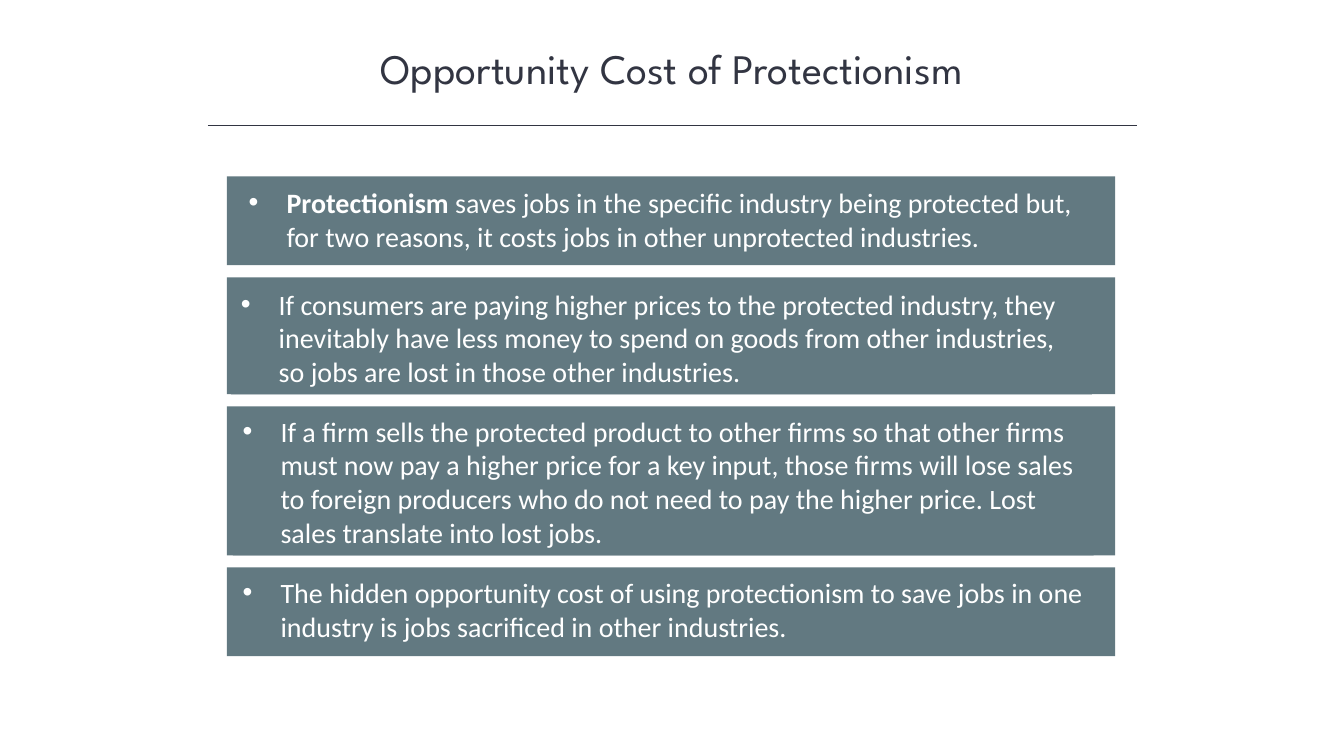
from dataclasses import dataclass

from lxml.etree import SubElement
from pptx import Presentation
from pptx.dml.color import RGBColor
from pptx.enum.shapes import MSO_CONNECTOR as Link, MSO_SHAPE as Shape
from pptx.enum.text import MSO_ANCHOR as Anchor, MSO_AUTO_SIZE as Fit, PP_ALIGN as Align
from pptx.oxml.ns import qn
from pptx.util import Pt

INK, SLATE, WHITE = "323542", "627981", "FFFFFF"
LEFT, TOP, WIDE, GAP = 162, 126, 634.5, 8.6
TEXT_WIDE, LINE, PAD = 615, 24.4, 6.8
INDENT = 27


@dataclass
class Card:
    high: float
    lines: int
    dx: float
    dy: float
    text: str
    lead: str = ""


CARDS = [
    Card(63.5, 2, 8.6, 3,
         " saves jobs in the specific industry being protected but, for two reasons, "
         "it costs jobs in other unprotected industries.", "Protectionism"),
    Card(83.5, 3, 3, 3.6,
         "If consumers are paying higher prices to the protected industry, they "
         "inevitably have less money to spend on goods from other industries, so jobs "
         "are lost in those other industries."),
    Card(106.5, 4, 4.3, 2.2,
         "If a firm sells the protected product to other firms so that other firms must "
         "now pay a higher price for a key input, those firms will lose sales to foreign "
         "producers who do not need to pay the higher price. Lost sales translate into "
         "lost jobs."),
    Card(63.5, 2, 4.3, 2.2,
         "The hidden opportunity cost of using protectionism to save jobs in one "
         "industry is jobs sacrificed in other industries."),
]


def color(code: str) -> RGBColor:
    return RGBColor.from_string(code)


def assign(item, values: dict) -> None:
    """Set each named attribute of item."""
    for name, value in values.items():
        setattr(item, name, value)


def write(para, text: str, tint: str, **look) -> None:
    """Add a run with the given font values."""
    run = para.add_run()
    run.text = text
    assign(run.font, look)
    run.font.color.rgb = color(tint)


def add_title(slide, text: str) -> None:
    title = slide.shapes.title
    assign(title, {"left": Pt(120), "top": Pt(26.6), "width": Pt(720), "height": Pt(44)})
    frame = title.text_frame
    assign(frame, {"word_wrap": True, "auto_size": Fit.NONE, "vertical_anchor": Anchor.TOP})
    para = frame.paragraphs[0]
    para.alignment = Align.CENTER
    write(para, text, INK, name="League Spartan", size=Pt(30))


def add_rule(slide) -> None:
    rule = slide.shapes.add_connector(Link.STRAIGHT, Pt(148.5), Pt(89.5), Pt(812), Pt(89.5))
    rule.line.color.rgb = color(INK)
    rule.line.width = Pt(1)
    SubElement(rule._element.spPr, qn("a:effectLst"))


def add_bullet(para) -> None:
    props = para._p.get_or_add_pPr()
    props.set("marL", str(Pt(INDENT)))
    props.set("indent", str(Pt(-INDENT)))
    SubElement(props, qn("a:buFont")).set("typeface", "Arial")
    SubElement(props, qn("a:buChar")).set("char", "•")


def add_box(group, x: float, y: float, wide: float, high: float):
    box = group.shapes.add_shape(Shape.RECTANGLE, Pt(x), Pt(y), Pt(wide), Pt(high))
    box.shadow.inherit = False
    box.fill.solid()
    box.fill.fore_color.rgb = color(SLATE)
    box.line.fill.background()
    return box


def add_card(slide, card: Card, top: float) -> None:
    group = slide.shapes.add_group_shape()
    add_box(group, LEFT, top, WIDE, card.high)
    body = add_box(group, LEFT + card.dx, top + card.dy, TEXT_WIDE, card.lines * LINE + PAD)
    frame = body.text_frame
    assign(frame, {"word_wrap": True, "vertical_anchor": Anchor.TOP})
    para = frame.paragraphs[0]
    para.alignment = Align.LEFT
    add_bullet(para)
    look = {"name": "Calibri", "size": Pt(20)}
    if card.lead:
        write(para, card.lead, WHITE, bold=True, **look)
    write(para, card.text, WHITE, **look)


def main() -> None:
    deck = Presentation()
    assign(deck, {"slide_width": Pt(960), "slide_height": Pt(540)})
    slide = deck.slides.add_slide(deck.slide_layouts.get_by_name("Title Only"))
    add_title(slide, "Opportunity Cost of Protectionism")
    add_rule(slide)
    top = TOP
    for card in CARDS:
        add_card(slide, card, top)
        top += card.high + GAP
    deck.save("out.pptx")


if __name__ == "__main__":
    main()
